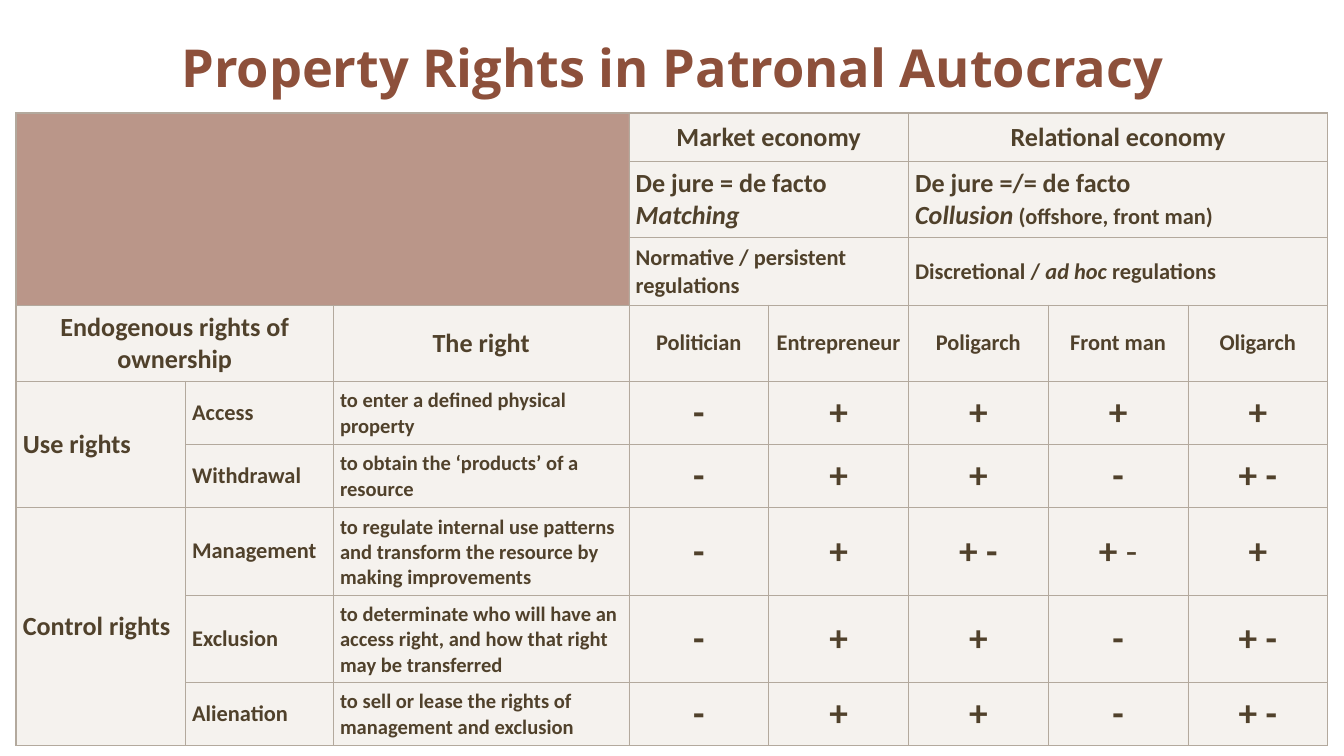
from lxml import etree
from pptx import Presentation
from pptx.dml.color import RGBColor
from pptx.enum.text import MSO_ANCHOR, PP_ALIGN
from pptx.oxml.ns import qn
from pptx.util import Inches, Pt

CENTER, LEFT = PP_ALIGN.CENTER, PP_ALIGN.LEFT
TOP, MIDDLE = MSO_ANCHOR.TOP, MSO_ANCHOR.MIDDLE
RUST = RGBColor(0x8D, 0x50, 0x3B)
CREAM = RGBColor(0xEF, 0xEA, 0xE4)
BROWN = RGBColor(0x50, 0x41, 0x2B)
BORDER = RGBColor(0xB3, 0xA9, 0x9D)

COLS = [1.26, 1.1, 2.2] + [1.04] * 5
ROWS = [0.36, 0.57, 0.5, 0.34, 0.47, 0.47, 0.65, 0.65, 0.47]


def style_cell(cell, row, col, color):
    """Give the cell thin borders, thicker at the table's edge, and a 60% opaque fill."""
    tc_pr = cell._tc.get_or_add_tcPr()
    edges = {"lnL": col == 0, "lnR": col == len(COLS) - 1,
             "lnT": row == 0, "lnB": row == len(ROWS) - 1}
    for tag, outer in edges.items():
        ln = etree.SubElement(tc_pr, qn("a:" + tag), w=str(Pt(1 if outer else 0.5)))
        fill = etree.SubElement(ln, qn("a:solidFill"))
        etree.SubElement(fill, qn("a:srgbClr"), val=str(BORDER))
    cell.fill.solid()
    cell.fill.fore_color.rgb = color
    etree.SubElement(tc_pr.find(qn("a:solidFill"))[0], qn("a:alpha"), val="60000")
    cell.margin_left = cell.margin_right = Inches(0.05)
    cell.margin_top = cell.margin_bottom = Inches(0.05)
    cell.vertical_anchor = MIDDLE


def write(tf, paragraphs, size, align, font="Calibri", color=BROWN):
    """Write paragraphs, each a string or a list of (text, font overrides) runs."""
    for i, runs in enumerate(paragraphs):
        p = tf.paragraphs[0] if i == 0 else tf.add_paragraph()
        p.alignment = align
        p.font.name = font
        p.font.size = Pt(size)
        p.font.bold = True
        p.font.color.rgb = color
        for text, overrides in [(runs, {})] if isinstance(runs, str) else runs:
            r = p.add_run()
            r.text = text
            for name, value in overrides.items():
                setattr(r.font, name, value)


prs = Presentation()
prs.slide_width = Inches(10)
prs.slide_height = prs.slide_width * 9 // 16
s = prs.slides.add_slide(prs.slide_layouts[6])

tf = s.shapes.add_textbox(Inches(0.12), Inches(0.21), Inches(9.76), Inches(0.88)).text_frame
tf.word_wrap = True
tf.vertical_anchor = TOP
write(tf, ["Property Rights in Patronal Autocracy"], 28, CENTER, "Open Sans", RUST)

frame = s.shapes.add_table(len(ROWS), len(COLS), Inches(0.12), Inches(0.84),
                           Inches(9.76), Inches(4.71))
table = frame.table
table.first_row = table.horz_banding = False
for column, width in zip(table.columns, COLS):
    column.width = Inches(width)
for table_row, height in zip(table.rows, ROWS):
    table_row.height = Inches(height)
frame.height = Inches(4.71)  # the rows stretch to fill the frame
for row in range(len(ROWS)):
    for col in range(len(COLS)):
        style_cell(table.cell(row, col), row, col, RUST if row < 3 and col < 3 else CREAM)

# Merged areas: first row, first column, last row, last column
merges = [(0, 0, 2, 2), (3, 0, 3, 1), (4, 0, 5, 0), (6, 0, 8, 0)]
merges += [(row, first, row, last) for row in range(3) for first, last in ((3, 4), (5, 7))]
for top, left, bottom, right in merges:
    table.cell(top, left).merge(table.cell(bottom, right))

# Row, column, size, alignment, paragraphs
ITALIC = {"italic": True}
headings = [
    (0, 3, 14, CENTER, ["Market economy"]),
    (0, 5, 14, CENTER, ["Relational economy"]),
    (1, 3, 14, LEFT, ["De jure = de facto", [("Matching", ITALIC)]]),
    (1, 5, 14, LEFT, ["De jure =/= de facto",
                      [("Collusion", ITALIC), (" (offshore, front man)", {"size": Pt(12)})]]),
    (2, 3, 12, LEFT, ["Normative / persistent regulations"]),
    (2, 5, 12, LEFT, [[("Discretional / ", {}), ("ad hoc ", ITALIC), ("regulations", {})]]),
    (3, 0, 14, CENTER, ["Endogenous rights of ownership"]),
    (3, 2, 14, CENTER, ["The right"]),
    (4, 0, 14, LEFT, ["Use rights"]),
    (6, 0, 14, LEFT, ["Control rights"]),
]
actors = ["Politician", "Entrepreneur", "Poligarch", "Front man", "Oligarch"]
headings += [(3, col, 12, CENTER, [actor]) for col, actor in enumerate(actors, 3)]
for row, col, size, align, paragraphs in headings:
    write(table.cell(row, col).text_frame, paragraphs, size, align)

rights = [
    ("Access", "to enter a defined physical property", ["-", "+", "+", "+", "+"]),
    ("Withdrawal", "to obtain the ‘products’ of a resource", ["-", "+", "+", "-", "+ -"]),
    ("Management", "to regulate internal use patterns and transform the resource by "
     "making improvements", ["-", "+", "+ -", [("+", {}), (" -", {"bold": False})], "+"]),
    ("Exclusion", "to determinate who will have an access right, and how that right "
     "may be transferred", ["-", "+", "+", "-", "+ -"]),
    ("Alienation", "to sell or lease the rights of management and exclusion",
     ["-", "+", "+", "-", "+ -"]),
]
for row, (right, meaning, signs) in enumerate(rights, 4):
    write(table.cell(row, 1).text_frame, [right], 12, LEFT)
    write(table.cell(row, 2).text_frame, [meaning], 11, LEFT)
    for col, sign in enumerate(signs, 3):
        write(table.cell(row, col).text_frame, [sign], 20, CENTER)

prs.save("out.pptx")
